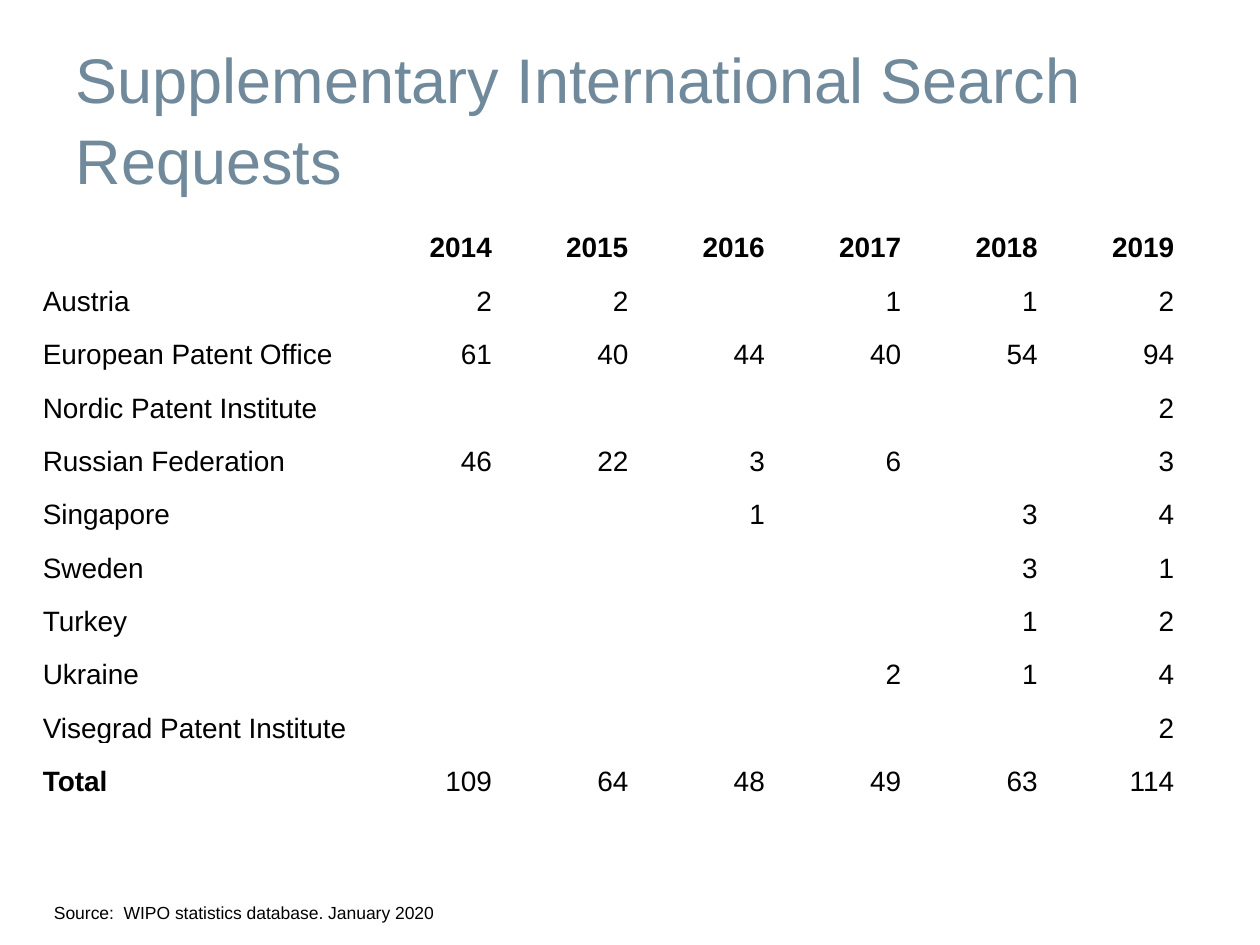
"""Build a slide tabulating supplementary international search requests by office."""
from typing import NamedTuple

from pptx import Presentation
from pptx.dml.color import RGBColor
from pptx.enum.text import MSO_ANCHOR, MSO_AUTO_SIZE, PP_ALIGN
from pptx.util import Inches, Pt

LEFT, RIGHT = PP_ALIGN.LEFT, PP_ALIGN.RIGHT
MIDDLE, BOTTOM = MSO_ANCHOR.MIDDLE, MSO_ANCHOR.BOTTOM
NO_AUTOFIT = MSO_AUTO_SIZE.NONE
FIT_SHAPE = MSO_AUTO_SIZE.SHAPE_TO_FIT_TEXT

TITLE_COLOR = RGBColor(0x70, 0x89, 0x9B)
TEXT_COLOR = RGBColor(0x00, 0x00, 0x00)
FONT = "Arial"
TITLE_ONLY = 5
MARGIN_LEFT = Inches(0.33)
TABLE_WIDTH = Inches(9)
TABLE_HEIGHT = Inches(4.66)
NAME_WIDTH = Inches(2.5)
CELL_INSET = Inches(0.01)


class Row(NamedTuple):
    """A table row: its label, one value per year, and what is bold."""

    label: str
    values: tuple
    bold_label: bool = False
    bold_values: bool = False


ROWS = (
    Row("", (2014, 2015, 2016, 2017, 2018, 2019), bold_values=True),
    Row("Austria", (2, 2, "", 1, 1, 2)),
    Row("European Patent Office", (61, 40, 44, 40, 54, 94)),
    Row("Nordic Patent Institute", ("", "", "", "", "", 2)),
    Row("Russian Federation", (46, 22, 3, 6, "", 3)),
    Row("Singapore", ("", "", 1, "", 3, 4)),
    Row("Sweden", ("", "", "", "", 3, 1)),
    Row("Turkey", ("", "", "", "", 1, 2)),
    Row("Ukraine", ("", "", "", 2, 1, 4)),
    Row("Visegrad Patent Institute", ("", "", "", "", "", 2)),
    Row("Total", (109, 64, 48, 49, 63, 114), bold_label=True),
)


def write(text_frame, text: str, size: float, color: RGBColor = TEXT_COLOR,
          alignment=LEFT, bold: bool = False):
    """Write one formatted paragraph and return it."""
    text_frame.text = text
    paragraph = text_frame.paragraphs[0]
    paragraph.alignment = alignment
    font = paragraph.font
    font.name, font.size, font.bold = FONT, Pt(size), bold
    font.color.rgb = color
    return paragraph


def add_title(slide, text: str) -> None:
    """Place and format the title placeholder."""
    title = slide.shapes.title
    title.left, title.top = Inches(0.5), Inches(0.3)
    title.width, title.height = Inches(9), Inches(1.25)
    title.text_frame.auto_size = NO_AUTOFIT
    title.text_frame.vertical_anchor = MIDDLE
    write(title.text_frame, text, 36, TITLE_COLOR).line_spacing = 1.06


def fill_cell(cell, text: str, alignment, bold: bool) -> None:
    """Format a transparent, bottom-anchored cell."""
    cell.fill.background()
    cell.vertical_anchor = BOTTOM
    cell.margin_left = cell.margin_top = cell.margin_right = CELL_INSET
    cell.margin_bottom = 0
    write(cell.text_frame, text, 16, alignment=alignment, bold=bold)


def add_requests_table(slide, rows: tuple[Row, ...]) -> None:
    """Add the table with a name column and equal year columns."""
    year_count = len(rows[0].values)
    table = slide.shapes.add_table(
        len(rows), year_count + 1, MARGIN_LEFT, Inches(1.67), TABLE_WIDTH, TABLE_HEIGHT
    ).table
    table.first_row = table.horz_banding = False
    table.columns[0].width = NAME_WIDTH
    for column in range(1, year_count + 1):
        table.columns[column].width = (TABLE_WIDTH - NAME_WIDTH) // year_count
    for index, row in enumerate(rows):
        fill_cell(table.cell(index, 0), row.label, LEFT, row.bold_label)
        for column, value in enumerate(row.values, start=1):
            fill_cell(table.cell(index, column), str(value), RIGHT, row.bold_values)


def add_source(slide, text: str) -> None:
    """Add the source line at the foot of the slide."""
    source = slide.shapes.add_textbox(MARGIN_LEFT, Inches(7.11), Inches(5), Inches(0.27))
    source.text_frame.word_wrap = True
    source.text_frame.auto_size = FIT_SHAPE
    write(source.text_frame, text, 10)


def main() -> None:
    """Build and save the presentation."""
    presentation = Presentation()
    presentation.slide_width, presentation.slide_height = Inches(10), Inches(7.5)
    slide = presentation.slides.add_slide(presentation.slide_layouts[TITLE_ONLY])
    add_title(slide, "Supplementary International Search Requests")
    add_source(slide, "Source:  WIPO statistics database. January 2020")
    add_requests_table(slide, ROWS)
    presentation.save("out.pptx")


if __name__ == "__main__":
    main()
